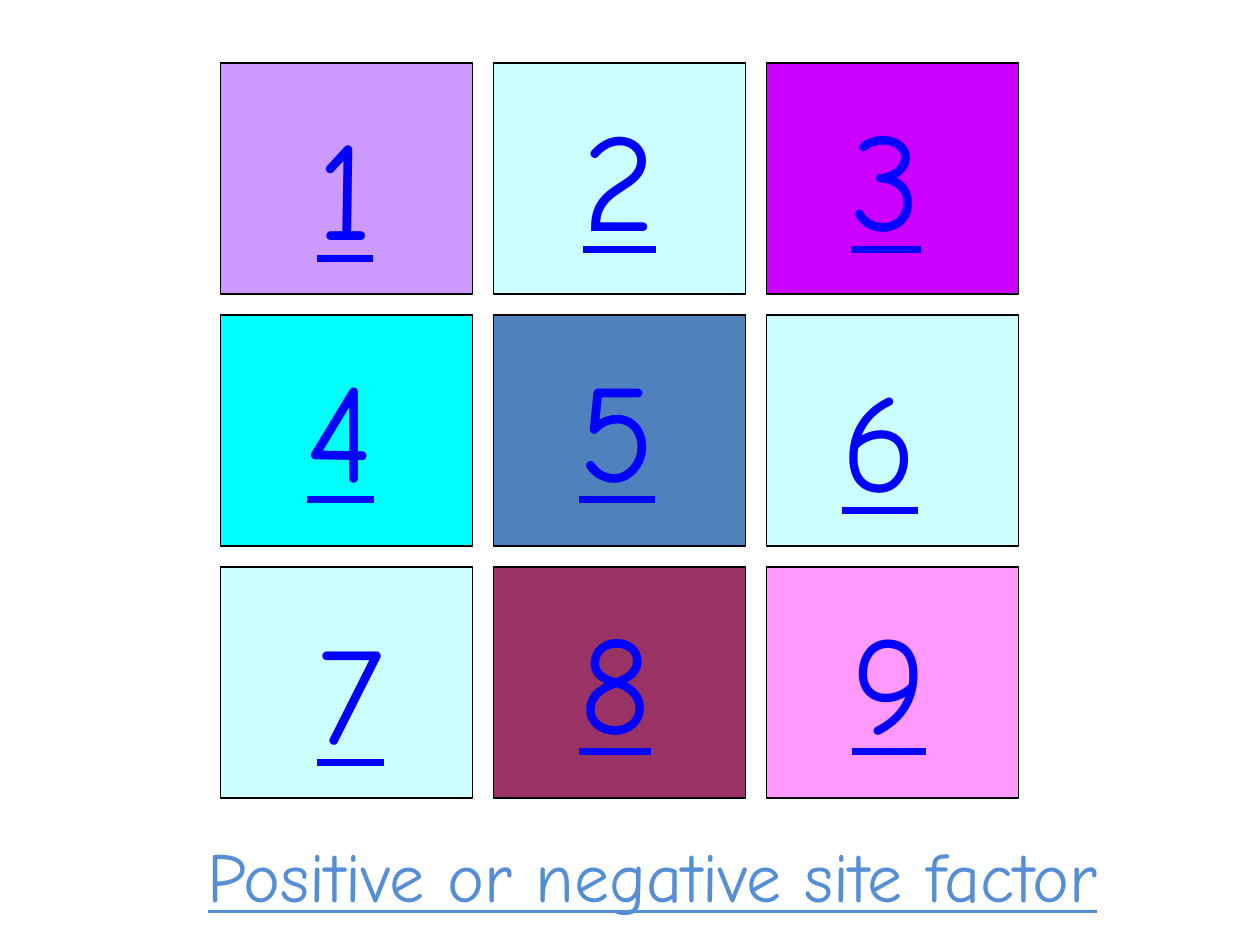
from lxml import etree
from pptx import Presentation
from pptx.dml.color import RGBColor
from pptx.enum.shapes import MSO_SHAPE
from pptx.enum.text import MSO_ANCHOR, MSO_AUTO_SIZE, PP_ALIGN
from pptx.oxml.ns import qn
from pptx.util import Cm, Pt

RECT = MSO_SHAPE.RECTANGLE
TOP = MSO_ANCHOR.TOP
GROW = MSO_AUTO_SIZE.SHAPE_TO_FIT_TEXT
CENTER = PP_ALIGN.CENTER

FONT = "Comic Neue"
BLACK = RGBColor(0x00, 0x00, 0x00)
BLUE = RGBColor(0x00, 0x00, 0xFF)
SKY = RGBColor(0x55, 0x8E, 0xD5)
LILAC = RGBColor(0xCC, 0x99, 0xFF)
ICE = RGBColor(0xCC, 0xFF, 0xFF)
VIOLET = RGBColor(0xCC, 0x00, 0xFF)
CYAN = RGBColor(0x00, 0xFF, 0xFF)
STEEL = RGBColor(0x4F, 0x81, 0xBD)
PLUM = RGBColor(0x99, 0x33, 0x66)
PINK = RGBColor(0xFF, 0x99, 0xFF)

TITLE = "Positive or negative site factor"
# digit, tile fill, digit offset in its tile (x, y) and digit box width, in cm
TILES = [
    ("1", LILAC, 1.7, 0.64, 1.7),
    ("2", ICE, 1.55, 0.46, 2.34),
    ("3", VIOLET, 1.45, 0.46, 2.34),
    ("4", CYAN, 1.48, 0.43, 2.34),
    ("5", STEEL, 1.48, 0.43, 2.34),
    ("6", ICE, 1.27, 0.64, 2.34),
    ("7", ICE, 1.7, 0.64, 2.34),
    ("8", PLUM, 1.48, 0.43, 2.34),
    ("9", PINK, 1.48, 0.43, 2.34),
]
COLS = 3
LEFT, UP = 4.45, 1.27
STEP_X, STEP_Y = 5.5, 5.08
WIDE, HIGH = 5.08, 4.66


def style(frame, size, color):
    frame.vertical_anchor = TOP
    frame.auto_size = GROW
    font = frame.paragraphs[0].runs[0].font
    font.name = FONT
    font.size = Pt(size)
    font.underline = True
    font.color.rgb = color


def add_tile(slide, x, y, fill):
    tile = slide.shapes.add_shape(RECT, Cm(x), Cm(y), Cm(WIDE), Cm(HIGH))
    tile.shadow.inherit = False
    tile.fill.solid()
    tile.fill.fore_color.rgb = fill
    tile.line.color.rgb = BLACK
    tile.line.width = Pt(0.75)


def add_digit(slide, x, y, width, digit):
    box = slide.shapes.add_textbox(Cm(x), Cm(y), Cm(width), Cm(3.64))
    frame = box.text_frame
    frame.text = digit
    frame.word_wrap = True
    style(frame, 80, BLUE)
    # Space before as a share of the line height
    props = frame.paragraphs[0]._p.get_or_add_pPr()
    space = etree.SubElement(props, qn("a:spcBef"))
    etree.SubElement(space, qn("a:spcPct"), val="50000")


def set_title(slide):
    title = slide.shapes.title
    title.left, title.top = Cm(2.57), Cm(16.66)
    title.width, title.height = Cm(21.16), Cm(1.96)
    frame = title.text_frame
    frame.text = TITLE
    frame.word_wrap = False
    frame.paragraphs[0].alignment = CENTER
    style(frame, 40, SKY)


def main():
    deck = Presentation()
    deck.slide_width, deck.slide_height = Cm(25.4), Cm(19.05)
    slide = deck.slides.add_slide(deck.slide_layouts[5])
    set_title(slide)
    for i, (digit, fill, dx, dy, width) in enumerate(TILES):
        row, col = divmod(i, COLS)
        x, y = LEFT + col * STEP_X, UP + row * STEP_Y
        add_tile(slide, x, y, fill)
        add_digit(slide, x + dx, y + dy, width, digit)
    deck.save("out.pptx")


if __name__ == "__main__":
    main()
